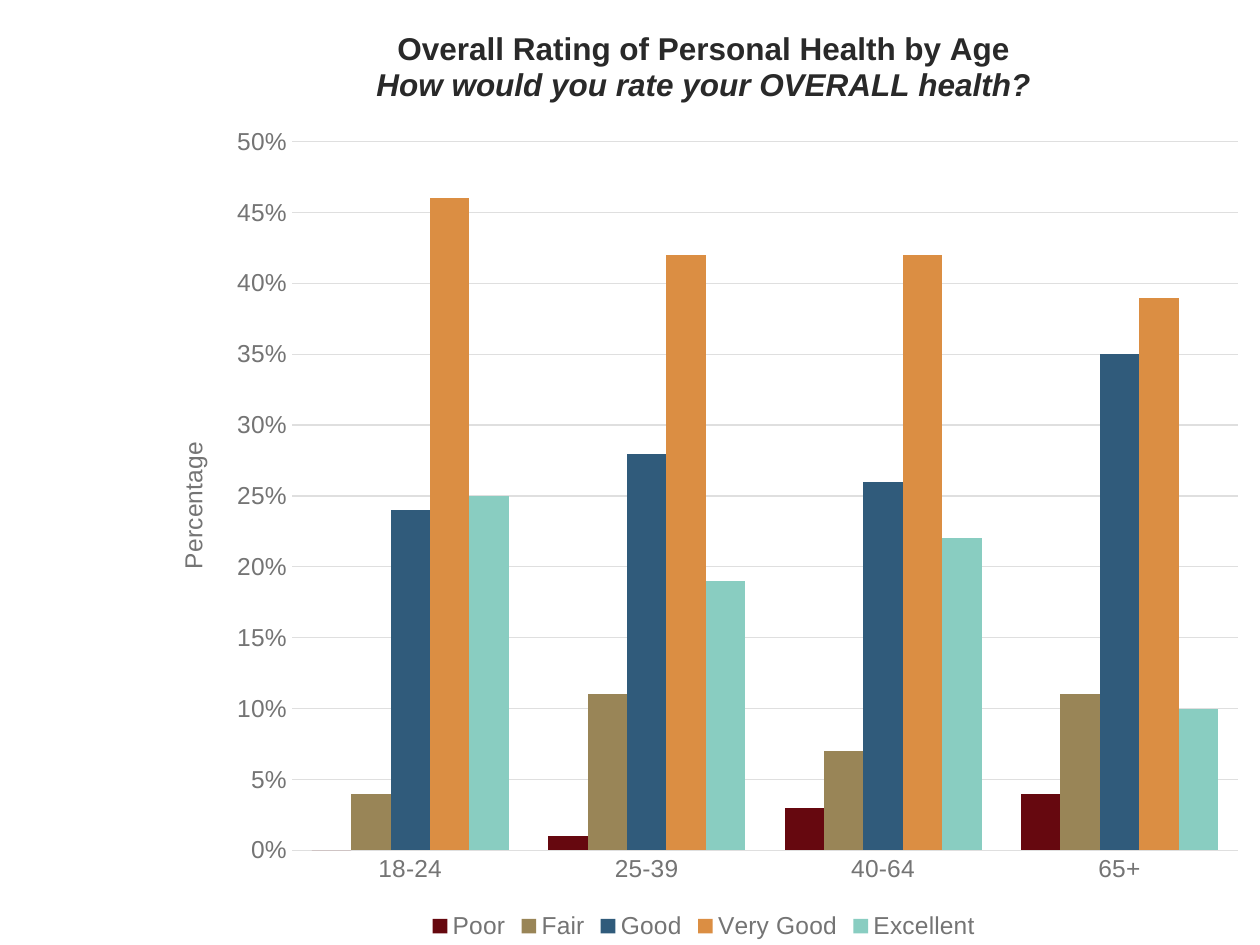
"""Build a slide with a clustered column chart of health ratings by age."""
from lxml import etree
from pptx import Presentation
from pptx.chart.data import CategoryChartData
from pptx.dml.color import RGBColor
from pptx.enum.chart import XL_CHART_TYPE, XL_LEGEND_POSITION, XL_TICK_MARK
from pptx.oxml.ns import qn
from pptx.util import Inches, Pt

COLUMN_CLUSTERED = XL_CHART_TYPE.COLUMN_CLUSTERED
LEGEND_BOTTOM = XL_LEGEND_POSITION.BOTTOM
NO_TICK = XL_TICK_MARK.NONE

COLORS = {
    "title": "292929", "label": "747474", "grid": "DFDFDF",
    "Poor": "66080F", "Fair": "998557", "Good": "305B7B",
    "Very Good": "DB8E43", "Excellent": "89CDC1",
}
TITLE_LINES = [
    ("Overall Rating of Personal Health by Age", False),
    ("How would you rate your OVERALL health?", True),
]
VALUE_TITLE = "Percentage"
AGES = ["18-24", "25-39", "40-64", "65+"]
RATINGS = {
    "Poor": [0, 0.01, 0.03, 0.04],
    "Fair": [0.04, 0.11, 0.07, 0.11],
    "Good": [0.24, 0.28, 0.26, 0.35],
    "Very Good": [0.46, 0.42, 0.42, 0.39],
    "Excellent": [0.25, 0.19, 0.22, 0.1],
}
SLIDE_WIDTH, SLIDE_HEIGHT = 10, 7.5
CHART_LEFT = 1.17
PLOT_SHARES = {"x": 0.13, "y": 0.15, "w": 0.85, "h": 0.75}
TITLE_FONT = {"name": "Arial", "size": Pt(18), "bold": True}
LABEL_FONT = {"name": "Arial", "size": Pt(14), "bold": False}


def color(name):
    return RGBColor.from_string(COLORS[name])


def format_font(font, values, color_name):
    for attribute, value in values.items():
        setattr(font, attribute, value)
    font.color.rgb = color(color_name)


def format_line(line):
    line.color.rgb = color("grid")
    line.width = Pt(0.75)


def place_plot(chart):
    plot_area = chart.element.find(".//" + qn("c:plotArea"))
    for old_layout in plot_area.findall(qn("c:layout")):
        plot_area.remove(old_layout)
    layout = etree.Element(qn("c:layout"))
    manual = etree.SubElement(layout, qn("c:manualLayout"))
    settings = {"layoutTarget": "inner", "xMode": "edge", "yMode": "edge", **PLOT_SHARES}
    for name, value in settings.items():
        etree.SubElement(manual, qn("c:" + name)).set("val", str(value))
    plot_area.insert(0, layout)


def add_title(chart):
    text_frame = chart.chart_title.text_frame
    for index, (text, italic) in enumerate(TITLE_LINES):
        paragraph = text_frame.add_paragraph() if index else text_frame.paragraphs[0]
        run = paragraph.add_run()
        run.text = text
        format_font(run.font, {**TITLE_FONT, "italic": italic}, "title")


def format_axes(chart):
    for axis in (chart.category_axis, chart.value_axis):
        axis.major_tick_mark = axis.minor_tick_mark = NO_TICK
        format_font(axis.tick_labels.font, LABEL_FONT, "label")
    format_line(chart.category_axis.format.line)
    value_axis = chart.value_axis
    value_axis.format.line.fill.background()
    format_line(value_axis.major_gridlines.format.line)
    value_axis.minimum_scale, value_axis.maximum_scale = 0, 0.5
    value_axis.major_unit = 0.05
    value_axis.tick_labels.number_format = "0%"
    value_axis.tick_labels.number_format_is_linked = False
    run = value_axis.axis_title.text_frame.paragraphs[0].add_run()
    run.text = VALUE_TITLE
    format_font(run.font, LABEL_FONT, "label")


def add_rating_chart(slide):
    data = CategoryChartData(number_format="0%")
    data.categories = AGES
    for name, values in RATINGS.items():
        data.add_series(name, values)
    chart = slide.shapes.add_chart(
        COLUMN_CLUSTERED, Inches(CHART_LEFT), 0,
        Inches(SLIDE_WIDTH - CHART_LEFT), Inches(SLIDE_HEIGHT), data,
    ).chart
    format_font(chart.font, {"name": "Arial", "size": Pt(10)}, "title")
    add_title(chart)
    format_axes(chart)
    plot = chart.plots[0]
    plot.gap_width, plot.overlap, plot.vary_by_categories = 100, 0, False
    for series in plot.series:
        series.format.fill.solid()
        series.format.fill.fore_color.rgb = color(series.name)
    chart.has_legend = True
    chart.legend.position = LEGEND_BOTTOM
    chart.legend.include_in_layout = False
    format_font(chart.legend.font, LABEL_FONT, "label")
    place_plot(chart)


def main():
    presentation = Presentation()
    presentation.slide_width = Inches(SLIDE_WIDTH)
    presentation.slide_height = Inches(SLIDE_HEIGHT)
    slide = presentation.slides.add_slide(presentation.slide_layouts[6])
    add_rating_chart(slide)
    presentation.save("out.pptx")


if __name__ == "__main__":
    main()
